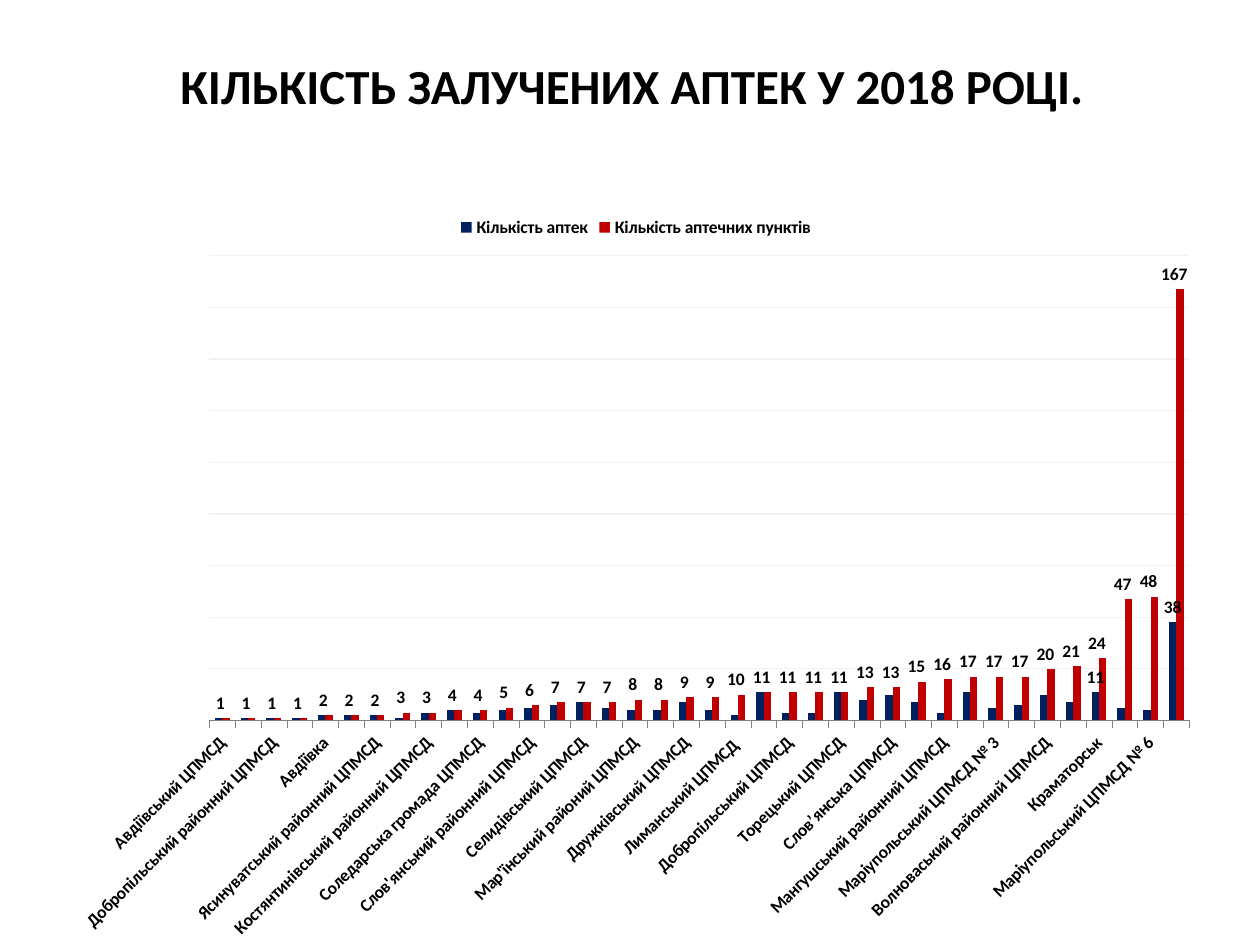
from lxml.etree import SubElement
from pptx import Presentation
from pptx.chart.data import CategoryChartData
from pptx.dml.color import RGBColor
from pptx.enum.chart import XL_CHART_TYPE as ChartType
from pptx.enum.chart import XL_LABEL_POSITION as LabelPosition
from pptx.enum.chart import XL_LEGEND_POSITION as LegendPosition
from pptx.enum.chart import XL_TICK_MARK as TickMark
from pptx.enum.shapes import MSO_SHAPE
from pptx.enum.text import MSO_ANCHOR, PP_ALIGN
from pptx.oxml.ns import qn
from pptx.util import Cm, Pt

COLORS = {"text": "000000", "pharmacies": "002060", "points": "C00000",
          "grid": "F2F2F2", "axis": "808080", "panel": "FFFFFF"}
FONT = "Calibri"
NUMBER_FORMAT = r"_-* #,##0\ _₴_-;\-* #,##0\ _₴_-"
SERIES = (("Кількість аптек", "pharmacies"), ("Кількість аптечних пунктів", "points"))
LABELLED_PHARMACIES = ("Краматорськ", "Маріуполь")
CENTRES = [
    ("Авдіївський ЦПМСД", 1, 1),
    ("Авдіївська лінійна поліклініка", 1, 1),
    ("Добропільський районний ЦПМСД", 1, 1),
    ("Олександрівський районний ЦПМСД", 1, 1),
    ("Авдіївка", 2, 2),
    ("Вугледарський ЦПМСД", 2, 2),
    ("Ясинуватський районний ЦПМСД", 2, 2),
    ("Мирноградський ЦПМСД", 1, 3),
    ("Костянтинівський районний ЦПМСД", 3, 3),
    ("Новогродівський ЦПМСД", 4, 4),
    ("Соледарська громада ЦПМСД", 3, 4),
    ("В-Новосілківський районний ЦПМСД", 4, 5),
    ("Слов'янський районний ЦПМСД", 5, 6),
    ("Костянтинівський ЦПМСД", 6, 7),
    ("Селидівський ЦПМСД", 7, 7),
    ("Покровський районний ЦПМСД", 5, 7),
    ("Мар'їнський районий ЦПМСД", 4, 8),
    ("Нікольський районний ЦПМСД", 4, 8),
    ("Дружківський ЦПМСД", 7, 9),
    ("Покровський ЦПМСД", 4, 9),
    ("Лиманський ЦПМСД ", 2, 10),
    ("Бахмутський ЦПМСД", 11, 11),
    ("Добропільський ЦПМСД", 3, 11),
    ("Краматорський ЦПМСД № 2", 3, 11),
    ("Торецький ЦПМСД", 11, 11),
    ("Краматорський ЦПМСД № 1", 8, 13),
    ("Слов’янська ЦПМСД", 10, 13),
    ("Бахмутський районний ЦПМСД", 7, 15),
    ("Мангушський районний ЦПМСД", 3, 16),
    ("Маріупольський ЦПМСД № 2", 11, 17),
    ("Маріупольський ЦПМСД № 3", 5, 17),
    ("Маріупольський ЦПМСД № 4", 6, 17),
    ("Волноваський районний ЦПМСД", 10, 20),
    ("Маріупольський ЦПМСД № 5", 7, 21),
    ("Краматорськ", 11, 24),
    ("Маріупольський ЦПМСД № 1", 5, 47),
    ("Маріупольський ЦПМСД № 6", 4, 48),
    ("Маріуполь", 38, 167),
]


def color(name):
    """Return the named palette colour."""
    return RGBColor.from_string(COLORS[name])


def style_font(font, size, bold=True):
    """Apply the slide's typeface and text colour."""
    font.name, font.size, font.bold = FONT, Pt(size), bold
    font.color.rgb = color("text")


def place_title(slide, left, top, width, height):
    """Place the title placeholder over a translucent panel."""
    title = slide.shapes.title
    panel = slide.shapes.add_shape(MSO_SHAPE.RECTANGLE, left, top, width, height)
    panel.shadow.inherit = False
    panel.line.fill.background()
    panel.fill.solid()
    panel.fill.fore_color.rgb = color("panel")
    fill_color = panel._element.spPr.find(qn("a:solidFill"))[0]
    SubElement(fill_color, qn("a:alpha")).set("val", "81000")
    title._element.addprevious(panel._element)
    title.left, title.top, title.width, title.height = left, top, width, height
    frame = title.text_frame
    frame.text = "КІЛЬКІСТЬ ЗАЛУЧЕНИХ АПТЕК У 2018 РОЦІ."
    frame.vertical_anchor = MSO_ANCHOR.MIDDLE
    paragraph = frame.paragraphs[0]
    paragraph.alignment = PP_ALIGN.CENTER
    paragraph.line_spacing = 0.9
    style_font(paragraph.font, 28)


def set_plot_layout(chart, **fractions):
    """Fix the inner plot area as fractions of the chart box."""
    plot_area = chart._chartSpace.chart.plotArea
    layout = plot_area.find(qn("c:layout"))
    if layout is None:
        layout = SubElement(plot_area, qn("c:layout"))
        plot_area.insert(0, layout)
    manual = SubElement(layout, qn("c:manualLayout"))
    settings = {"layoutTarget": "inner", "xMode": "edge", "yMode": "edge", **fractions}
    for tag, value in settings.items():
        SubElement(manual, qn(f"c:{tag}")).set("val", str(value))


def style_axes(chart):
    """Slant the category names and leave only gridlines for values."""
    categories = chart.category_axis
    categories.major_tick_mark = TickMark.OUTSIDE
    categories.format.line.color.rgb = color("axis")
    categories.format.line.width = Pt(0.25)
    style_font(categories.tick_labels.font, 10)
    body = categories._element.find(qn("c:txPr")).find(qn("a:bodyPr"))
    body.set("rot", "-2700000")
    values = chart.value_axis
    values.minimum_scale, values.maximum_scale, values.major_unit = 0, 180, 20
    values.has_major_gridlines = True
    grid_line = values.major_gridlines.format.line
    grid_line.color.rgb = color("grid")
    grid_line.width = Pt(0.75)
    values.visible = False


def style_series(plot):
    """Colour the columns and label their values."""
    plot.gap_width, plot.overlap, plot.vary_by_categories = 150, 0, False
    for series, (_, color_name) in zip(plot.series, SERIES):
        series.format.fill.solid()
        series.format.fill.fore_color.rgb = color(color_name)
    pharmacies, points = plot.series
    for index, (name, *_) in enumerate(CENTRES):
        if name in LABELLED_PHARMACIES:
            label = pharmacies.points[index].data_label
            style_font(label.font, 10)
            label.position = LabelPosition.OUTSIDE_END
    pharmacies.data_labels.show_value = False
    labels = points.data_labels
    labels.show_value = True
    labels.number_format, labels.number_format_is_linked = NUMBER_FORMAT, False
    labels.position = LabelPosition.OUTSIDE_END
    style_font(labels.font, 10)


def place_chart(slide, left, top, width, height):
    """Add the clustered column chart of pharmacies by centre."""
    names, *columns = zip(*CENTRES)
    data = CategoryChartData()
    data.categories = names
    for (series_name, _), values in zip(SERIES, columns):
        data.add_series(series_name, values)
    chart = slide.shapes.add_chart(
        ChartType.COLUMN_CLUSTERED, left, top, width, height, data).chart
    style_font(chart.font, 10, bold=False)
    chart.has_title = False
    chart.has_legend = True
    chart.legend.position = LegendPosition.TOP
    chart.legend.include_in_layout = False
    style_font(chart.legend.font, 10)
    style_axes(chart)
    style_series(chart.plots[0])
    set_plot_layout(chart, x=0.13, y=0.07, w=0.85, h=0.62)


def main():
    """Build and save the slide."""
    presentation = Presentation()
    presentation.slide_width, presentation.slide_height = Cm(25.4), Cm(19.05)
    slide = presentation.slides.add_slide(presentation.slide_layouts[5])
    place_title(slide, Cm(1.8), Cm(0.41), Cm(21.87), Cm(2.77))
    place_chart(slide, Cm(1.2), Cm(4.1), Cm(23.24), Cm(15.11))
    presentation.save("out.pptx")


if __name__ == "__main__":
    main()
